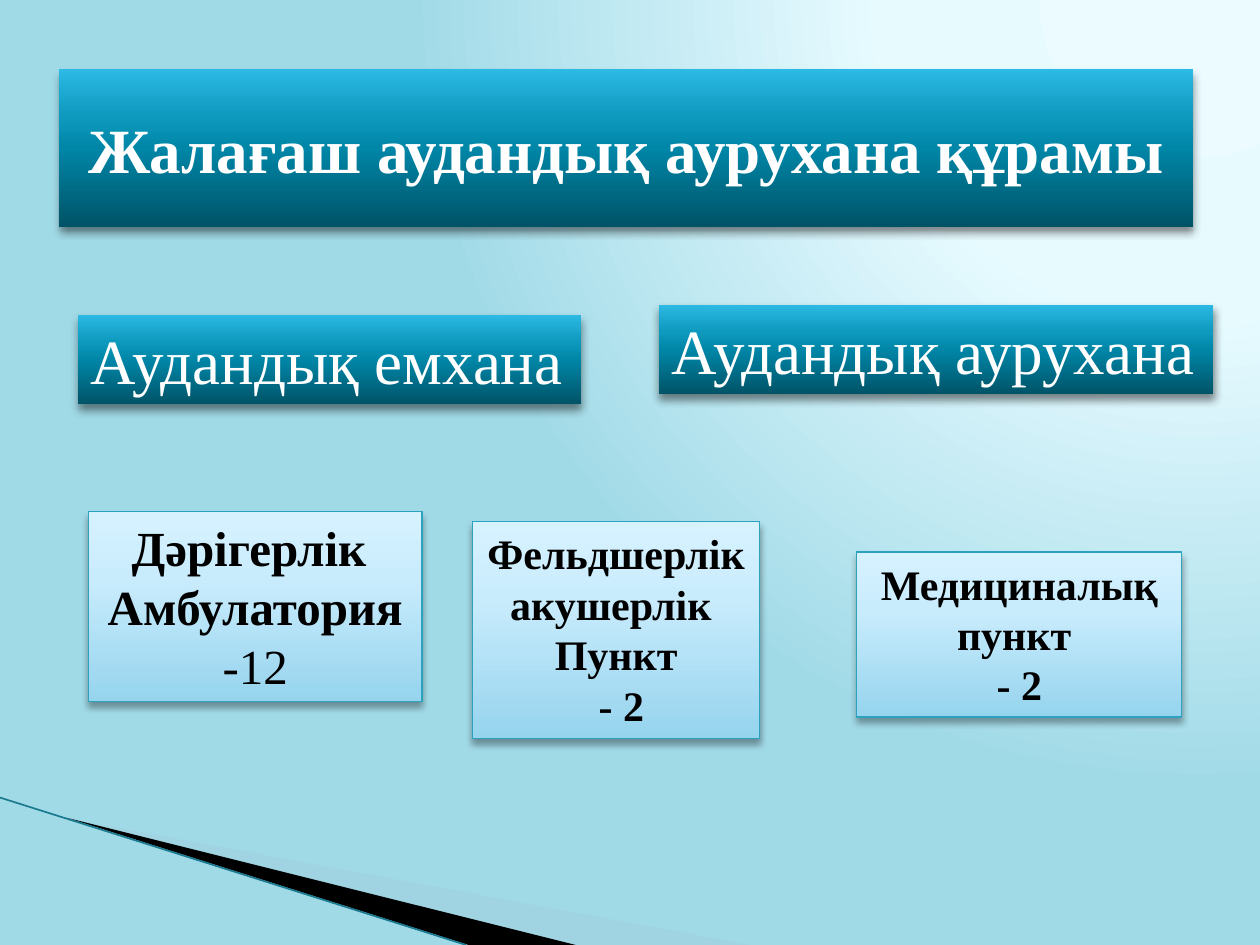
from lxml.etree import SubElement
from pptx import Presentation
from pptx.dml.color import RGBColor
from pptx.enum.shapes import MSO_CONNECTOR as CONN, MSO_SHAPE as SHAPE
from pptx.enum.text import MSO_ANCHOR as ANCHOR, MSO_AUTO_SIZE as FIT, PP_ALIGN as ALIGN
from pptx.oxml.ns import qn
from pptx.util import Inches, Pt

WHITE = RGBColor(0xFF, 0xFF, 0xFF)
BLACK = RGBColor(0, 0, 0)
TEAL = RGBColor(0x2D, 0xA2, 0xBF)
EDGE = RGBColor(0x1A, 0x7A, 0x90)
MIST = RGBColor(0xA0, 0xCB, 0xDC)
SKY = [(0, RGBColor(0xEB, 0xFB, 0xFF)), (40, RGBColor(0xE7, 0xFB, 0xFF)),
       (100, RGBColor(0xA1, 0xDA, 0xE7))]
DEEP = [(0, RGBColor(0, 0x53, 0x67)), (50, RGBColor(0, 0x86, 0xA7)),
        (70, RGBColor(0x0E, 0x9A, 0xBE)), (100, RGBColor(0x2C, 0xB9, 0xE3))]
PALE = [(0, RGBColor(0x96, 0xD4, 0xEE)), (65, RGBColor(0xC9, 0xEC, 0xFC)),
        (100, RGBColor(0xD7, 0xF2, 0xFF))]
FONT = "Times New Roman"
W, H = Inches(10), Inches(7.5)


def node(parent, tag, **attrs):
    """Append a drawing element with the given attributes."""
    return SubElement(parent, qn(f"a:{tag}"), {k: str(v) for k, v in attrs.items()})


def add_gradient(fill, element, stops, circle=None):
    """Fill with colour stops, upwards or around a circle's focus."""
    fill.gradient()
    grad = element.find(".//" + qn("a:gradFill"))
    for child in list(grad):
        grad.remove(child)
    gs_list = node(grad, "gsLst")
    for pos, color in stops:
        node(node(gs_list, "gs", pos=pos * 1000), "srgbClr", val=color)
    if circle:
        focus = {side: share * 1000 for side, share in zip("ltrb", circle)}
        node(node(grad, "path", path="circle"), "fillToRect", **focus)
    else:
        node(grad, "lin", ang=270 * 60000, scaled=0)


def add_shadow(sp, alpha, blur, dist):
    """Cast a soft black shadow straight down."""
    sp.shadow.inherit = False
    effects = sp._element.spPr.find(qn("a:effectLst"))
    shadow = node(effects, "outerShdw", blurRad=Pt(blur), dist=Pt(dist),
                  dir=90 * 60000, algn="ctr", rotWithShape=0)
    node(node(shadow, "srgbClr", val=BLACK), "alpha", val=alpha * 1000)


def place(sp, box):
    """Move and size a shape in inches."""
    sp.left, sp.top, sp.width, sp.height = map(Inches, box)


def write(tf, lines, size, color, bold=True, align=ALIGN.CENTER,
          anchor=ANCHOR.TOP, wrap=True, fit=FIT.SHAPE_TO_FIT_TEXT, plain=()):
    """Write one paragraph a line, with the lines in plain not bold."""
    tf.word_wrap, tf.auto_size, tf.vertical_anchor = wrap, fit, anchor
    for i, text in enumerate(lines):
        p = tf.add_paragraph() if i else tf.paragraphs[0]
        p.alignment = align
        r = p.add_run()
        r.text = text
        r.font.name, r.font.size = FONT, Pt(size)
        r.font.bold = bold and text not in plain
        r.font.color.rgb = color


def add_title(s, text, box):
    """Format the title placeholder as a dark banner."""
    sp = s.shapes.title
    place(sp, box)
    add_gradient(sp.fill, sp._element.spPr, DEEP)
    add_shadow(sp, 45, 5, 3)
    write(sp.text_frame, [text], 36, WHITE, anchor=ANCHOR.MIDDLE, fit=FIT.NONE)


def add_box(s, box, stops, line=None):
    """Add a gradient rectangle and return it."""
    sp = s.shapes.add_shape(SHAPE.RECTANGLE, *map(Inches, box))
    add_gradient(sp.fill, sp._element.spPr, stops)
    if line:
        sp.line.color.rgb, sp.line.width = line, Pt(0.75)
    else:
        sp.line.fill.background()
    return sp


def add_heading(s, text, box):
    """Add a dark one-line heading."""
    sp = add_box(s, box, DEEP)
    add_shadow(sp, 45, 5, 3)
    write(sp.text_frame, [text], 36, WHITE, bold=False, align=ALIGN.LEFT, wrap=False)


def add_unit(s, lines, box, size, plain=()):
    """Add a pale outlined box that names a unit and its count."""
    sp = add_box(s, box, PALE, TEAL)
    add_shadow(sp, 35, 4, 3)
    write(sp.text_frame, lines, size, BLACK, plain=plain)


def add_wedge(s, points, color, alpha=100):
    """Draw a filled outline through points in inches."""
    start, *rest = [(Inches(x), Inches(y)) for x, y in points]
    builder = s.shapes.build_freeform(*start)
    builder.add_line_segments(rest, close=True)
    sp = builder.convert_to_shape()
    sp.fill.solid()
    sp.fill.fore_color.rgb = color
    node(sp._element.spPr.find(".//" + qn("a:srgbClr")), "alpha", val=alpha * 1000)
    sp.line.fill.background()
    sp.shadow.inherit = False


def add_edge(s, start, end):
    """Draw the thin line along the wedges."""
    cx = s.shapes.add_connector(CONN.STRAIGHT, *map(Inches, start + end))
    cx.line.color.rgb, cx.line.width = EDGE, Pt(0.95)
    node(cx._element.spPr, "effectLst")


def main():
    """Build the slide on the hospital's structure."""
    prs = Presentation()
    prs.slide_width, prs.slide_height = W, H
    s = prs.slides.add_slide(prs.slide_layouts[5])
    add_gradient(s.background.fill, s._element, SKY, circle=(95, -106, 5, 206))
    add_wedge(s, [(0.55, 6.5), (5.95, 7.5), (4.56, 7.5)], MIST, alpha=40)
    add_wedge(s, [(0.53, 6.49), (4.57, 7.5), (3.72, 7.5)], BLACK)
    add_edge(s, (0, 6.33), (3.7, 7.5))
    add_title(s, "Жалағаш аудандық аурухана құрамы", (0.47, 0.55, 9, 1.25))
    add_heading(s, "Аудандық емхана", (0.62, 2.5, 3.99, 0.71))
    add_heading(s, "Аудандық аурухана", (5.23, 2.42, 4.4, 0.71))
    add_unit(s, ["Дәрігерлік ", "Амбулатория", "-12"],
             (0.7, 4.06, 2.65, 1.51), 28, plain=("-12",))
    add_unit(s, ["Фельдшерлік ", "акушерлік ", "Пункт", " - 2"],
             (3.75, 4.14, 2.28, 1.72), 24)
    add_unit(s, ["Медициналық", "пункт ", "- 2"], (6.8, 4.38, 2.58, 1.31), 24)
    prs.save("out.pptx")


if __name__ == "__main__":
    main()
